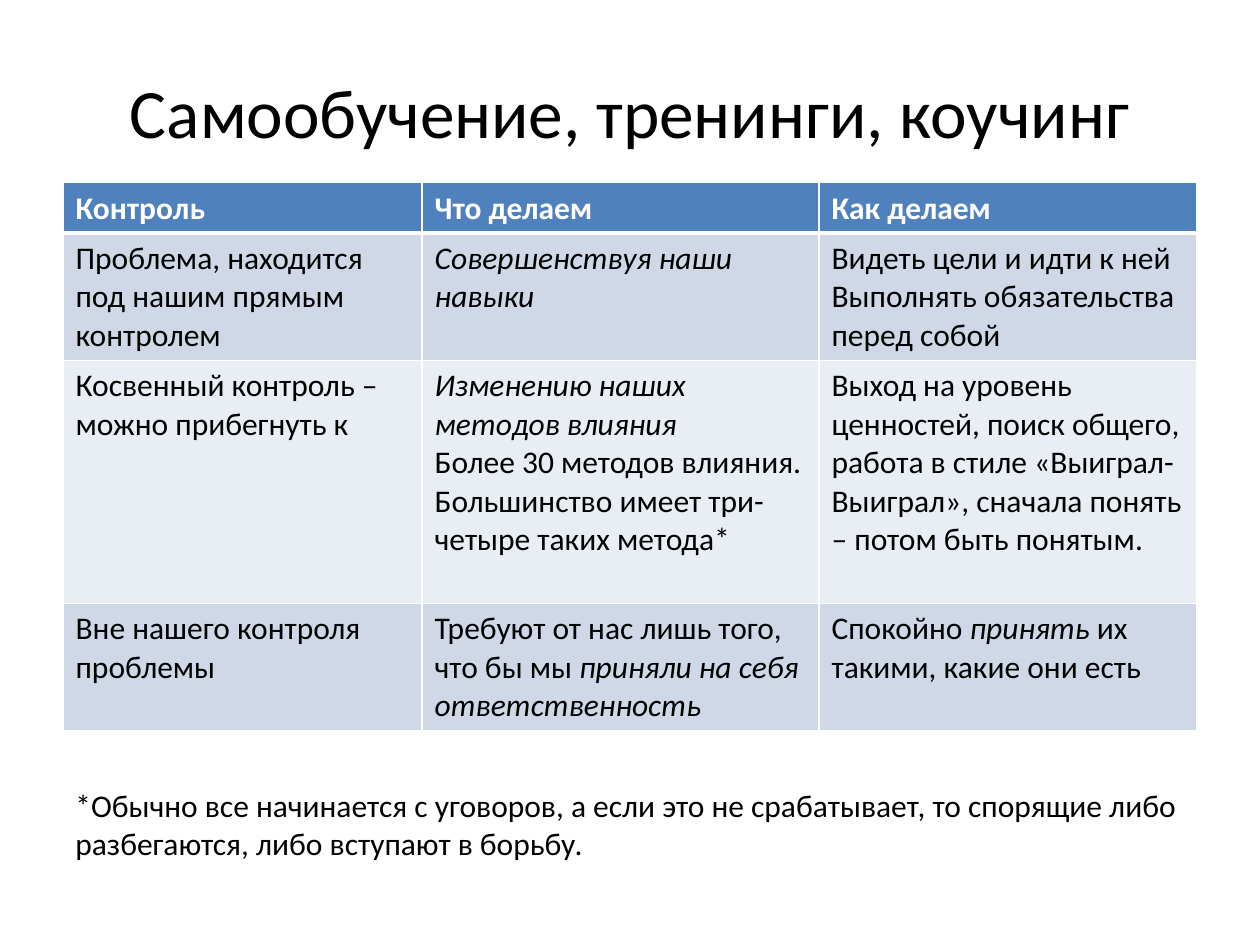
from lxml.etree import SubElement
from pptx import Presentation
from pptx.dml.color import RGBColor
from pptx.enum.text import MSO_ANCHOR, PP_ALIGN
from pptx.oxml.ns import qn
from pptx.util import Inches, Pt

BLACK = RGBColor(0x00, 0x00, 0x00)
WHITE = RGBColor(0xFF, 0xFF, 0xFF)
HEADER_BLUE = RGBColor(0x4F, 0x81, 0xBD)
BAND_DARK = RGBColor(0xD0, 0xD8, 0xE8)
BAND_LIGHT = RGBColor(0xE9, 0xED, 0xF4)
FONT = "Calibri"

TITLE = "Самообучение, тренинги, коучинг"
FOOTNOTE = ("*Обычно все начинается с уговоров, а если это не срабатывает, "
            "то спорящие либо разбегаются, либо вступают в борьбу.")
COL_WIDTHS = [2.85, 3.15, 3]
ROW_HEIGHTS = [0.4, 1.01, 1.93, 1.01]
# Underscores enclose italics; a newline starts a new paragraph.
ROWS = [
    ["Контроль", "Что делаем", "Как делаем"],
    ["Проблема, находится под нашим прямым контролем",
     "_Совершенствуя наши навыки_",
     "Видеть цели и идти к ней\nВыполнять обязательства перед собой"],
    ["Косвенный контроль – можно прибегнуть к",
     "_Изменению наших методов влияния_\n"
     "Более 30 методов влияния. Большинство имеет три-четыре таких метода*",
     "Выход на уровень ценностей, поиск общего, работа в стиле "
     "«Выиграл-Выиграл», сначала понять – потом быть понятым."],
    ["Вне нашего контроля проблемы",
     "Требуют от нас лишь того, что бы мы _приняли на себя ответственность_",
     "Спокойно _принять_ их такими, какие они есть"],
]


def write(tf, text, size, color=BLACK, bold=False, align=PP_ALIGN.LEFT):
    """Fill a text frame, setting the parts between underscores in italics."""
    tf.word_wrap = True
    for i, line in enumerate(text.split("\n")):
        p = tf.paragraphs[0] if i == 0 else tf.add_paragraph()
        p.alignment = align
        for j, part in enumerate(line.split("_")):
            if not part:
                continue
            r = p.add_run()
            r.text = part
            r.font.name = FONT
            r.font.size = Pt(size)
            r.font.bold = bold
            r.font.italic = j % 2 == 1
            r.font.color.rgb = color


def set_borders(cell, widths):
    """Draw white borders; widths gives points for each side."""
    tc_pr = cell._tc.get_or_add_tcPr()
    for side, width in widths.items():
        ln = SubElement(tc_pr, qn(f"a:ln{side}"), w=str(Pt(width)))
        fill = SubElement(ln, qn("a:solidFill"))
        SubElement(fill, qn("a:srgbClr"), val=str(WHITE))


def add_text(slide, box, text, size, align=PP_ALIGN.LEFT, anchor=MSO_ANCHOR.TOP):
    tf = slide.shapes.add_textbox(*map(Inches, box)).text_frame
    tf.vertical_anchor = anchor
    write(tf, text, size, align=align)


def add_control_table(slide, box):
    table = slide.shapes.add_table(len(ROWS), len(COL_WIDTHS),
                                   *map(Inches, box)).table
    for column, width in zip(table.columns, COL_WIDTHS):
        column.width = Inches(width)
    for r, (row, height) in enumerate(zip(ROWS, ROW_HEIGHTS)):
        table.rows[r].height = Inches(height)
        header = r == 0
        band = HEADER_BLUE if header else BAND_DARK if r % 2 else BAND_LIGHT
        borders = {"L": 1, "R": 1, "T": 3 if r == 1 else 1, "B": 3 if header else 1}
        for c, text in enumerate(row):
            cell = table.cell(r, c)
            set_borders(cell, borders)
            cell.fill.solid()
            cell.fill.fore_color.rgb = band
            write(cell.text_frame, text, 18, WHITE if header else BLACK, header)


def main():
    prs = Presentation()
    prs.slide_width, prs.slide_height = Inches(10), Inches(7.5)
    slide = prs.slides.add_slide(prs.slide_layouts[6])
    add_text(slide, (0.5, 0.53, 9, 0.69), TITLE, 39.6,
             PP_ALIGN.CENTER, MSO_ANCHOR.MIDDLE)
    add_control_table(slide, (0.5, 1.45, sum(COL_WIDTHS), sum(ROW_HEIGHTS)))
    add_text(slide, (0.5, 6.19, 9, 0.71), FOOTNOTE, 18)
    prs.save("out.pptx")


if __name__ == "__main__":
    main()
